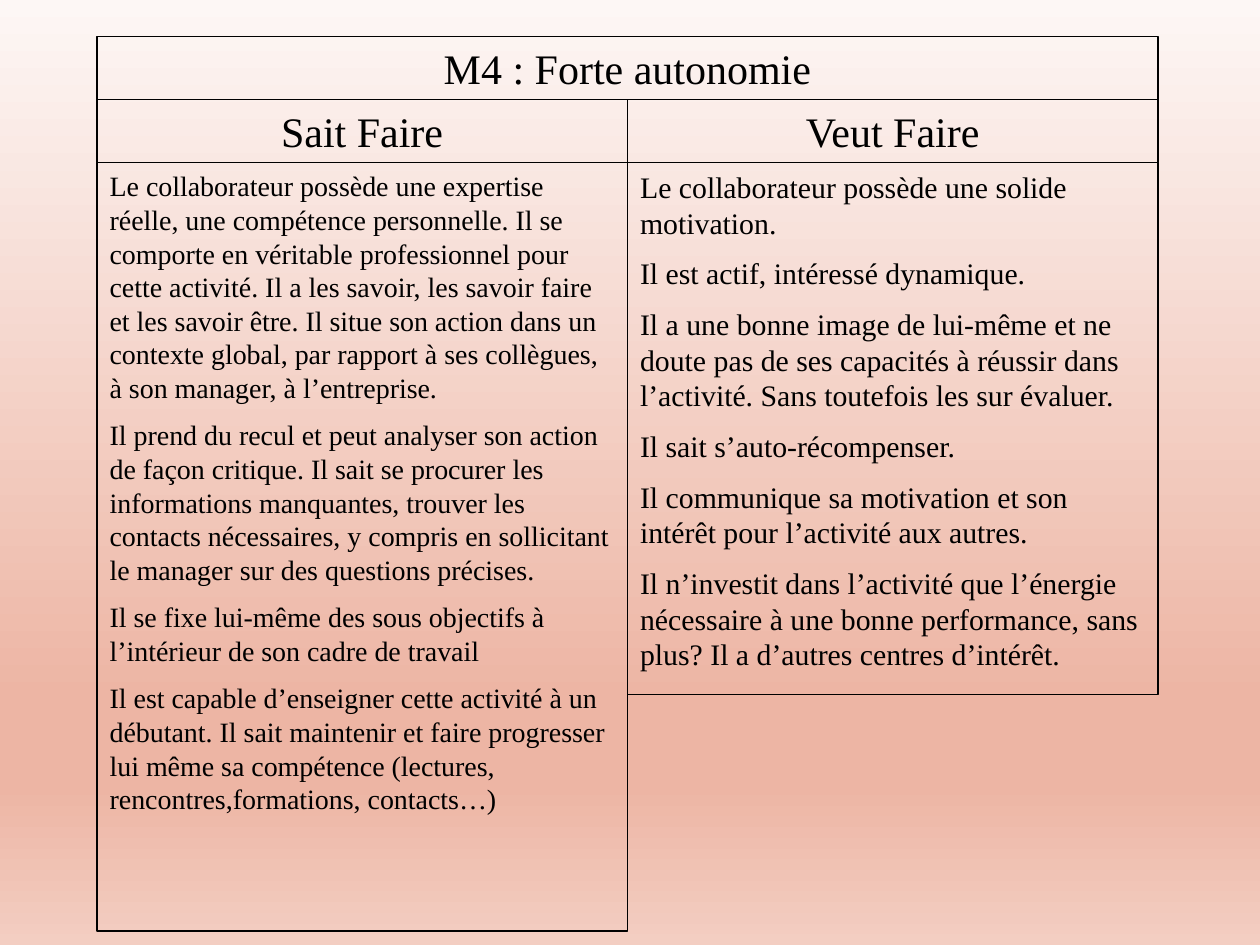
import copy
import dataclasses

import pptx
import pptx.dml.color
import pptx.enum.text
import pptx.oxml
import pptx.oxml.ns
import pptx.slide
import pptx.util

Inches = pptx.util.Inches
Pt = pptx.util.Pt
Align = pptx.enum.text.PP_ALIGN


@dataclasses.dataclass(frozen=True)
class Theme:
    font: str = "Times New Roman"
    ink: str = "000000"
    head: int = 24
    left: int = 16
    right: int = 17
    line: float = 0.75
    stops: tuple = ((0, "FDF7F5"), (0.74, "EDB5A4"), (0.83, "EDB5A4"), (1, "F3CEC2"))


@dataclasses.dataclass(frozen=True)
class Cell:
    slot: int
    x: float
    y: float
    width: float
    height: float
    size: int
    align: Align
    lines: tuple[str, ...]


THEME = Theme()
LEFT, TOP, COL, ROW = 0.77, 0.29, 4.21, 0.5
MID = LEFT + COL
HEAD_Y, BODY_Y = TOP + ROW, TOP + 2 * ROW

SKILLS = (
    "Le collaborateur possède une expertise réelle, une compétence personnelle. "
    "Il se comporte en véritable professionnel pour cette activité. Il a les savoir, "
    "les savoir faire et les savoir être. Il situe son action dans un contexte global, "
    "par rapport à ses collègues, à son manager, à l’entreprise.",
    "Il prend du recul et peut analyser son action de façon critique. Il sait se procurer "
    "les informations manquantes, trouver les contacts nécessaires, y compris en "
    "sollicitant le manager sur des questions précises.",
    "Il se fixe lui-même des sous objectifs à l’intérieur de son cadre de travail",
    "Il est capable d’enseigner cette activité à un débutant. Il sait maintenir et faire "
    "progresser lui même sa compétence (lectures, rencontres,formations, contacts…)",
)
DRIVE = (
    "Le collaborateur possède une solide motivation.",
    "Il est actif, intéressé dynamique.",
    "Il a une bonne image de lui-même et ne doute pas de ses capacités à réussir dans "
    "l’activité. Sans toutefois les sur évaluer.",
    "Il sait s’auto-récompenser.",
    "Il communique sa motivation et son intérêt pour l’activité aux autres.",
    "Il n’investit dans l’activité que l’énergie nécessaire à une bonne performance, "
    "sans plus? Il a d’autres centres d’intérêt.",
)
CELLS = (
    Cell(0, LEFT, TOP, 2 * COL, ROW, THEME.head, Align.CENTER, ("M4 : Forte autonomie",)),
    Cell(1, LEFT, HEAD_Y, COL, ROW, THEME.head, Align.CENTER, ("Sait Faire",)),
    Cell(3, MID, HEAD_Y, COL, ROW, THEME.head, Align.CENTER, ("Veut Faire",)),
    Cell(2, LEFT, BODY_Y, COL, 6.1, THEME.left, Align.LEFT, SKILLS),
    Cell(4, MID, BODY_Y, COL, 4.22, THEME.right, Align.LEFT, DRIVE),
)


def rgb(code: str) -> pptx.dml.color.RGBColor:
    return pptx.dml.color.RGBColor.from_string(code)


def paint_back(slide: pptx.slide.Slide) -> None:
    fill = slide.background.fill
    fill.gradient()
    fill.gradient_angle = 270
    group = next(slide.element.iter(pptx.oxml.ns.qn("a:gsLst")))
    for _ in range(len(THEME.stops) - len(group)):
        group.append(copy.deepcopy(group[0]))
    for stop, (place, code) in zip(fill.gradient_stops, THEME.stops):
        stop.position = place
        stop.color.rgb = rgb(code)


def clear_bullet(para) -> None:
    props = para._p.get_or_add_pPr()
    props.set("marL", "0")
    props.set("indent", "0")
    props.append(pptx.oxml.parse_xml(f"<a:buNone {pptx.oxml.ns.nsdecls('a')}/>"))


def draw_cell(slide: pptx.slide.Slide, cell: Cell) -> None:
    """Move, frame and fill the placeholder that the cell names."""
    shape = next(
        item for item in slide.placeholders if item.placeholder_format.idx == cell.slot
    )
    shape.left, shape.top = Inches(cell.x), Inches(cell.y)
    shape.width, shape.height = Inches(cell.width), Inches(cell.height)
    shape.fill.background()
    shape.line.color.rgb = rgb(THEME.ink)
    shape.line.width = Pt(THEME.line)

    frame = shape.text_frame
    frame.text = "\n".join(cell.lines)
    frame.word_wrap = True
    frame.auto_size = pptx.enum.text.MSO_AUTO_SIZE.NONE
    frame.vertical_anchor = pptx.enum.text.MSO_ANCHOR.TOP
    for index, para in enumerate(frame.paragraphs):
        clear_bullet(para)
        para.alignment = cell.align
        para.space_before = Pt(cell.size / 2 if index else 0)
        font = para.font
        font.name, font.size, font.bold = THEME.font, Pt(cell.size), False
        font.color.rgb = rgb(THEME.ink)


def main() -> None:
    deck = pptx.Presentation()
    deck.slide_width, deck.slide_height = Inches(10), Inches(7.5)
    slide = deck.slides.add_slide(deck.slide_layouts.get_by_name("Comparison"))
    paint_back(slide)
    for cell in CELLS:
        draw_cell(slide, cell)
    deck.save("out.pptx")


if __name__ == "__main__":
    main()
